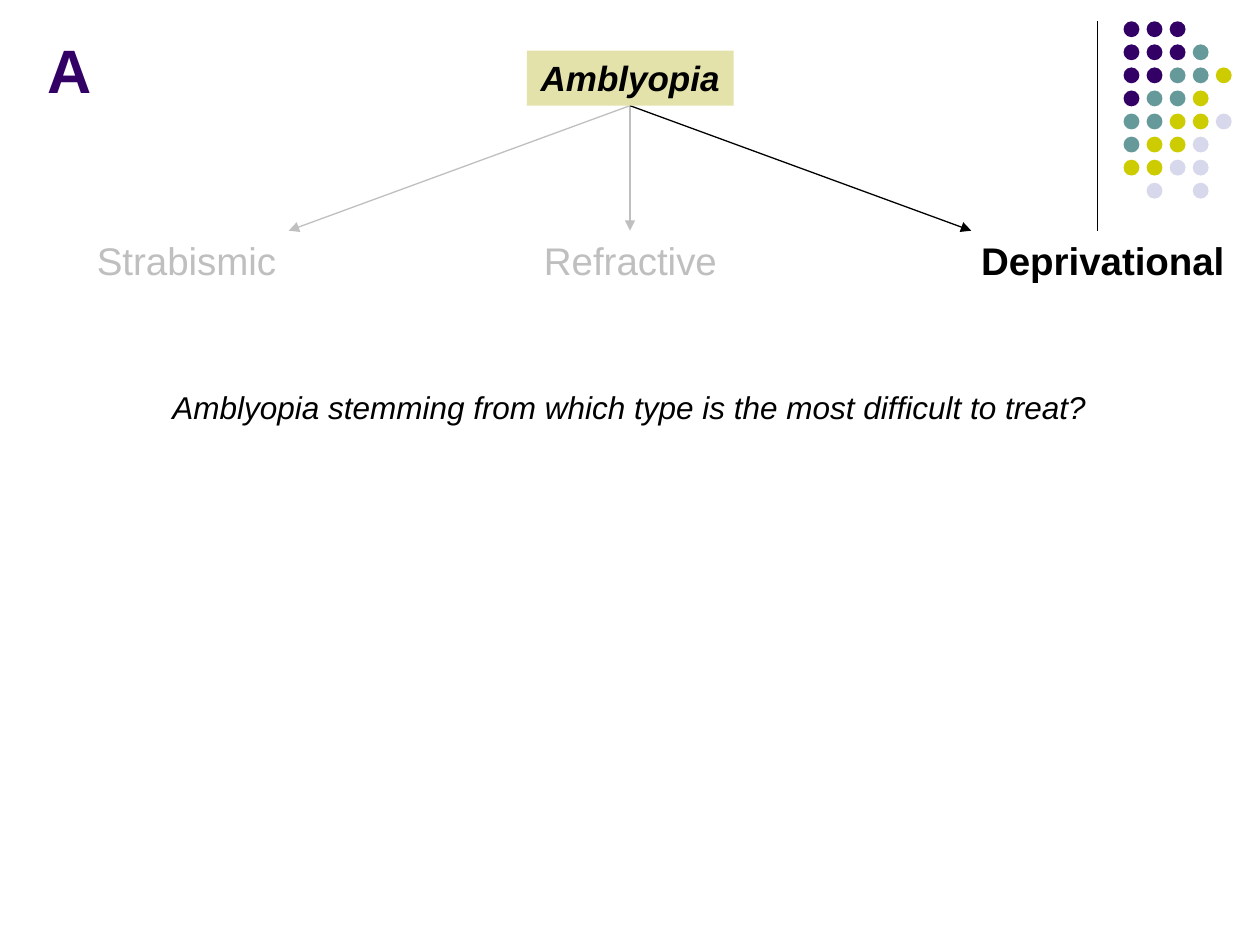
from dataclasses import dataclass

from lxml.etree import SubElement
from pptx import Presentation
from pptx.dml.color import RGBColor
from pptx.enum.shapes import MSO_CONNECTOR, MSO_SHAPE
from pptx.enum.text import MSO_ANCHOR, PP_ALIGN
from pptx.oxml.ns import qn
from pptx.util import Cm, Pt

BLACK, GRAY, PURPLE, KHAKI = "000000", "BFBFBF", "330066", "E2E2AA"
DOT_COLORS = {"P": PURPLE, "T": "669999", "Y": "CCCC00", "L": "D8D8EC"}
DOT_ROWS = ["PPP", "PPPT", "PPTTY", "PTTY", "TTYYL", "TYYL", "YYLL", " L L"]
DOT_LEFT, DOT_TOP, DOT_PITCH, DOT_SIZE = 22.65, 0.43, 0.465, 0.32
HUB_X, HUB_Y, BRANCH_Y = 12.7, 2.13, 4.65


@dataclass
class Label:
    text: str
    left: float
    top: float
    width: float
    height: float
    size: int
    color: str = BLACK
    align: PP_ALIGN = PP_ALIGN.CENTER
    bold: bool = False
    italic: bool = False
    wrap: bool = False
    anchor: MSO_ANCHOR = MSO_ANCHOR.TOP
    fill: str = ""


@dataclass
class Line:
    start: tuple[float, float]
    end: tuple[float, float]
    color: str = BLACK
    arrow: bool = True


LABELS = [
    Label("Amblyopia", 10.62, 1.02, 4.17, 1.11, 20, bold=True, italic=True, fill=KHAKI),
    Label("Strabismic", 1.65, BRANCH_Y, 4.17, 1.19, 22, GRAY, PP_ALIGN.RIGHT),
    Label("Refractive", 10.69, BRANCH_Y, 4.04, 1.19, 22, GRAY),
    Label("Deprivational", 19.53, BRANCH_Y, 5.49, 1.19, 22, align=PP_ALIGN.LEFT, bold=True),
    Label("A", 0.71, 0.48, 3, 1.78, 35, PURPLE, PP_ALIGN.LEFT, bold=True,
          wrap=True, anchor=MSO_ANCHOR.BOTTOM),
    Label("Amblyopia stemming from which type is the most difficult to treat?",
          2.97, 7.7, 19.43, 1.02, 18, italic=True, wrap=True),
]
LINES = [
    Line((22.12, 0.43), (22.12, BRANCH_Y), arrow=False),
    Line((HUB_X, HUB_Y), (5.82, BRANCH_Y), GRAY),
    Line((HUB_X, HUB_Y), (HUB_X, BRANCH_Y), GRAY),
    Line((HUB_X, HUB_Y), (19.58, BRANCH_Y)),
]


def rgb(color: str) -> RGBColor:
    return RGBColor.from_string(color)


def draw_dots(page) -> None:
    group = page.shapes.add_group_shape()
    for row, codes in enumerate(DOT_ROWS):
        for column, code in enumerate(codes):
            if code == " ":
                continue
            dot = group.shapes.add_shape(
                MSO_SHAPE.OVAL, Cm(DOT_LEFT + column * DOT_PITCH),
                Cm(DOT_TOP + row * DOT_PITCH), Cm(DOT_SIZE), Cm(DOT_SIZE))
            dot.shadow.inherit = False
            dot.fill.solid()
            dot.fill.fore_color.rgb = rgb(DOT_COLORS[code])
            dot.line.fill.background()


def draw_line(page, line: Line) -> None:
    connector = page.shapes.add_connector(
        MSO_CONNECTOR.STRAIGHT, *map(Cm, line.start + line.end))
    connector.line.color.rgb = rgb(line.color)
    connector.line.width = Pt(0.75)
    if line.arrow:
        SubElement(connector.line._get_or_add_ln(), qn("a:tailEnd"), type="triangle")
    SubElement(connector._element.spPr, qn("a:effectLst"))


def draw_label(page, label: Label) -> None:
    box = page.shapes.add_textbox(
        *map(Cm, (label.left, label.top, label.width, label.height)))
    if label.fill:
        box.fill.solid()
        box.fill.fore_color.rgb = rgb(label.fill)
    frame = box.text_frame
    frame.word_wrap = label.wrap
    frame.vertical_anchor = label.anchor
    para = frame.paragraphs[0]
    para.text = label.text
    para.alignment = label.align
    font = para.font
    font.name = "Arial"
    font.size = Pt(label.size)
    font.bold = label.bold
    font.italic = label.italic
    font.color.rgb = rgb(label.color)


def main() -> None:
    deck = Presentation()
    deck.slide_width, deck.slide_height = Cm(25.4), Cm(19.05)
    page = deck.slides.add_slide(deck.slide_layouts[6])
    draw_dots(page)
    for line in LINES:
        draw_line(page, line)
    for label in LABELS:
        draw_label(page, label)
    deck.save("out.pptx")


if __name__ == "__main__":
    main()
